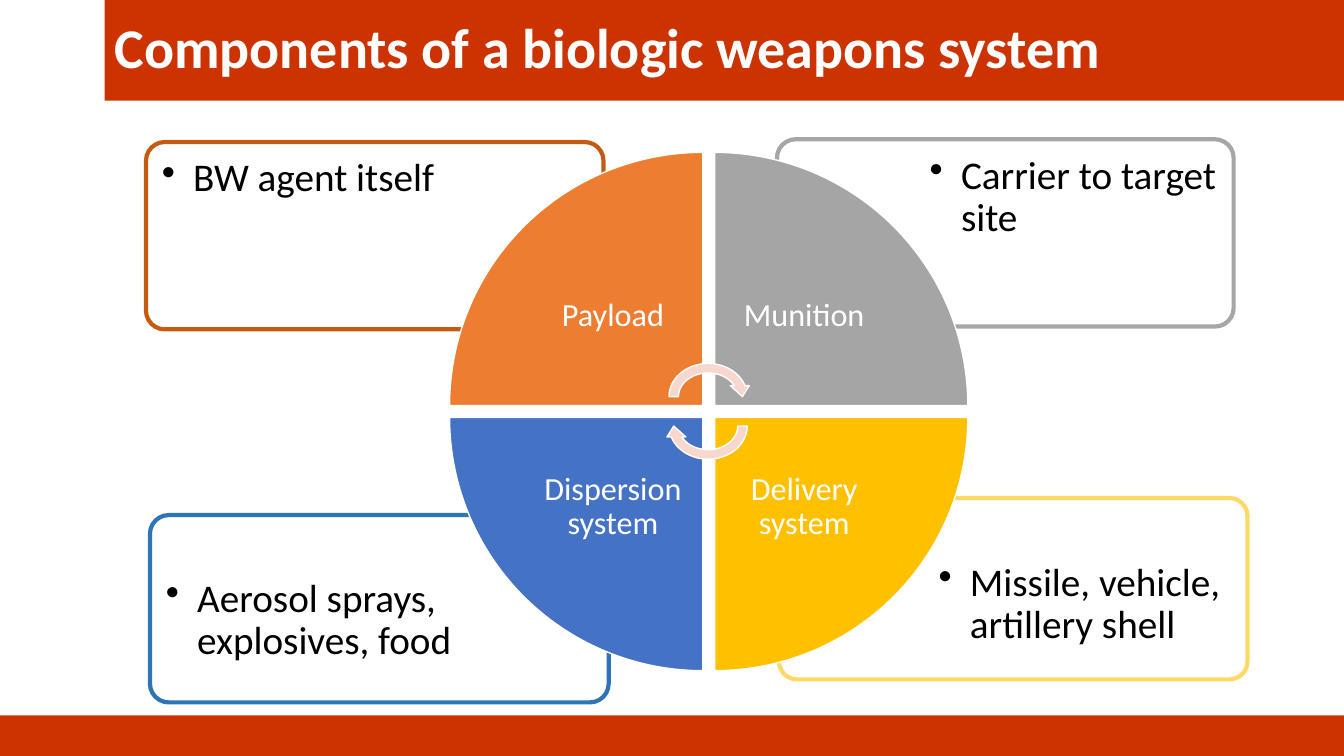
from dataclasses import dataclass

from lxml.etree import SubElement
from pptx import Presentation
from pptx.dml.color import RGBColor
from pptx.enum.shapes import MSO_SHAPE as Preset
from pptx.enum.text import MSO_ANCHOR as Anchor, PP_ALIGN as Align
from pptx.oxml.ns import qn
from pptx.util import Cm, Pt


@dataclass(frozen=True)
class Theme:
    font: str = "Calibri"
    band: str = "CC3300"
    white: str = "FFFFFF"
    black: str = "000000"
    arrow: str = "F8D7CE"
    title_size: int = 40
    card_size: int = 28
    label_size: int = 23


THEME = Theme()

# Wheel geometry in cm
WHEEL_LEFT, WHEEL_TOP = 11.33, 3.84
WEDGE, WEDGE_STEP = 6.38, 6.68
LABEL = 4.52

# Column, row, wedge colour, turn, label
WEDGES = [
    (0, 0, "ED7D31", 0, "Payload"),
    (1, 0, "A5A5A5", 90, "Munition"),
    (1, 1, "FFC000", 180, "Delivery system"),
    (0, 1, "4472C4", 270, "Dispersion system"),
]

# Column, row, card position and size, line colour, text inset, text
CARDS = [
    (1, 1, (19.63, 12.55, 11.81, 4.57), "FFD966", 0.38,
     "Missile, vehicle, artillery shell"),
    (0, 1, (3.78, 12.98, 11.56, 4.72), "2E75B6", 0.3,
     "Aerosol sprays, explosives, food"),
    (1, 0, (19.58, 3.51, 11.51, 4.72), "A6A6A6", 0.3,
     "Carrier to target site"),
    (0, 0, (3.68, 3.58, 11.53, 4.72), "C55A11", 0.3,
     "BW agent itself"),
]


def add_block(page, preset, place, fill, line=None, width=1, turn=0):
    block = page.shapes.add_shape(preset, *map(Cm, place))
    block.shadow.inherit = False
    block.rotation = turn
    block.fill.solid()
    block.fill.fore_color.rgb = RGBColor.from_string(fill)
    if line:
        block.line.color.rgb = RGBColor.from_string(line)
        block.line.width = Pt(width)
    else:
        block.line.fill.background()
    return block


def set_text(shape, text, size, colour, align=Align.LEFT, anchor=Anchor.MIDDLE,
             inset=None, bullet=False, bold=False):
    frame = shape.text_frame
    frame.word_wrap = True
    frame.vertical_anchor = anchor
    if inset is not None:
        frame.margin_left = frame.margin_right = Cm(inset)
        frame.margin_top = frame.margin_bottom = Cm(inset)
    para = frame.paragraphs[0]
    para.text = text
    para.alignment = align
    para.line_spacing = 0.9
    if bullet:
        add_bullet(para)
    para.font.name = THEME.font
    para.font.size = Pt(size)
    para.font.bold = bold
    para.font.color.rgb = RGBColor.from_string(colour)


def add_bullet(para):
    properties = para._p.get_or_add_pPr()
    indent = Cm(0.79)
    properties.set("marL", str(indent))
    properties.set("indent", str(-indent))
    SubElement(properties, qn("a:buChar")).set("char", "•")


def add_card(page, column, row, place, line, inset, text):
    card = add_block(page, Preset.ROUNDED_RECTANGLE, place, THEME.white, line, 3)
    card.adjustments[0] = 0.1
    # The text keeps to the outer corner, clear of the wheel
    left, top, width, height = place
    gap = 0.1
    text_width, text_height = width * 0.683, height * 0.705
    text_left = left + width - gap - text_width if column else left + gap
    text_top = top + height - gap - text_height if row else top + gap
    box = page.shapes.add_textbox(
        *map(Cm, (text_left, text_top, text_width, text_height)))
    set_text(box, text, THEME.card_size, THEME.black, anchor=Anchor.TOP,
             inset=inset, bullet=True)


def add_wedge(page, column, row, fill, turn, text):
    left = WHEEL_LEFT + column * WEDGE_STEP
    top = WHEEL_TOP + row * WEDGE_STEP
    add_block(page, Preset.PIE_WEDGE, (left, top, WEDGE, WEDGE), fill,
              THEME.white, turn=turn)
    # The label sits against the centre of the wheel
    label_left = left if column else left + WEDGE - LABEL
    label_top = top if row else top + WEDGE - LABEL
    box = page.shapes.add_textbox(
        *map(Cm, (label_left, label_top, LABEL, LABEL)))
    set_text(box, text, THEME.label_size, THEME.white, Align.CENTER, inset=0.46)


def main():
    deck = Presentation()
    deck.slide_width, deck.slide_height = Cm(33.87), Cm(19.05)
    page = deck.slides.add_slide(deck.slide_layouts[6])

    # Footer band and title
    add_block(page, Preset.RECTANGLE, (0, 18.03, 33.87, 1.02), THEME.band)
    title = add_block(page, Preset.RECTANGLE, (2.64, 0, 31.23, 2.54), THEME.band)
    set_text(title, "Components of a biologic weapons system",
             THEME.title_size, THEME.white, bold=True)

    # Corner cards behind the wheel
    for card in CARDS:
        add_card(page, *card)

    # Wheel
    for wedge in WEDGES:
        add_wedge(page, *wedge)

    # Cycle arrows at the centre
    for top, turn in ((9.04, 0), (9.78, 180)):
        add_block(page, Preset.CIRCULAR_ARROW, (16.74, top, 2.21, 1.91),
                  THEME.arrow, THEME.white, turn=turn)

    deck.save("out.pptx")


if __name__ == "__main__":
    main()
